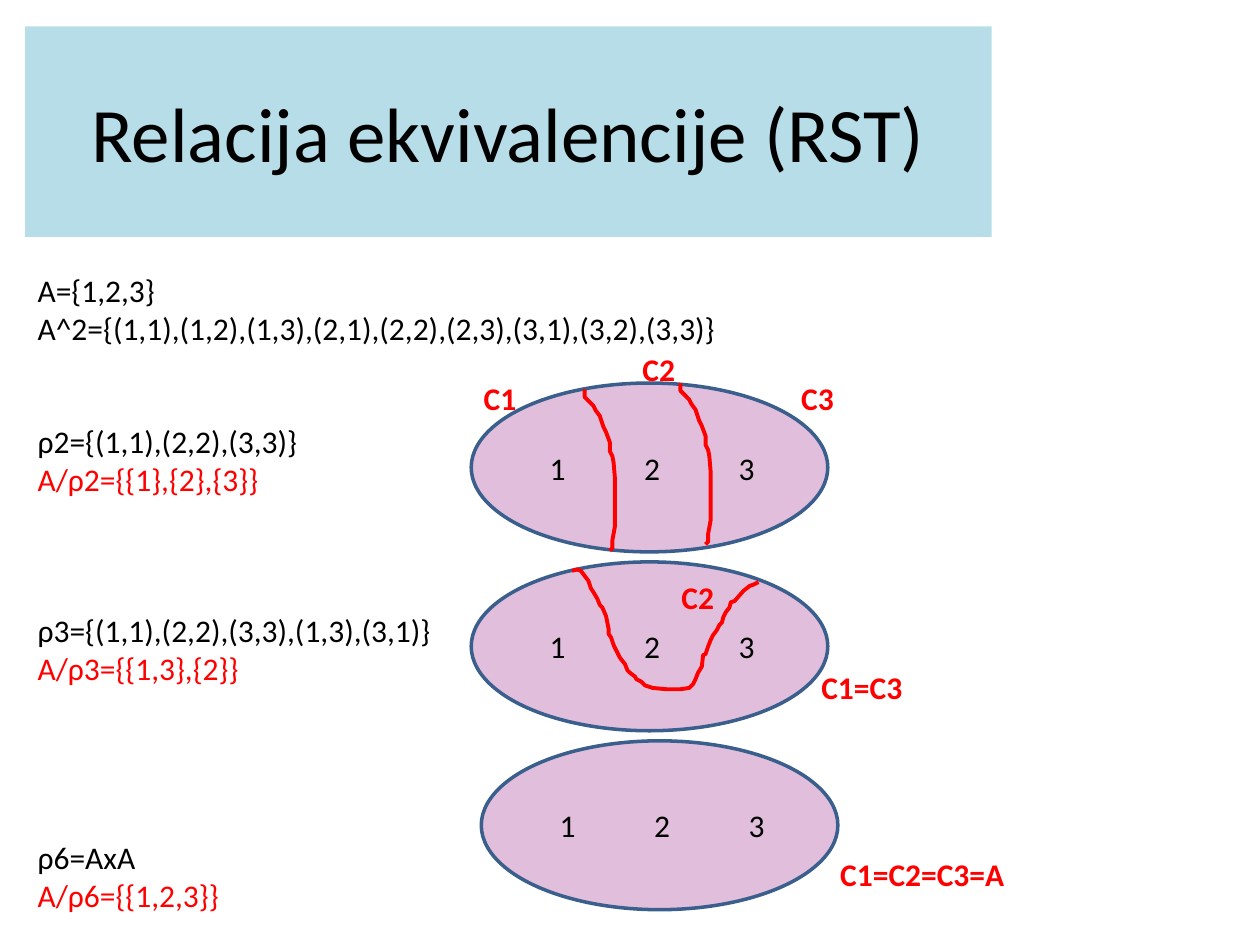
from dataclasses import dataclass
from pptx import Presentation
from pptx.dml.color import RGBColor
from pptx.enum.shapes import MSO_SHAPE
from pptx.enum.text import MSO_ANCHOR, PP_ALIGN
from pptx.oxml.ns import qn
from pptx.util import Inches, Pt
from lxml.etree import SubElement

BLACK = RGBColor(0, 0, 0)
RED = RGBColor(0xFF, 0, 0)
AQUA = RGBColor(0xB7, 0xDE, 0xE8)
PINK = RGBColor(0xE1, 0xBF, 0xDC)
BLUE = RGBColor(0x3A, 0x5F, 0x8C)

LINE = 21.6  # height of one text line in points


@dataclass
class Line:
    text: str
    color: RGBColor = BLACK
    gap: int = 0  # empty lines above


@dataclass
class Label:
    text: str
    x: float
    y: float
    w: float = 0.46


@dataclass
class Oval:
    x: float
    y: float


LINES = [
    Line("A={1,2,3}"),
    Line("A^2={(1,1),(1,2),(1,3),(2,1),(2,2),(2,3),(3,1),(3,2),(3,3)}"),
    Line("ρ2={(1,1),(2,2),(3,3)}", gap=2),
    Line("A/ρ2={{1},{2},{3}}", RED),
    Line("ρ3={(1,1),(2,2),(3,3),(1,3),(3,1)}", gap=3),
    Line("A/ρ3={{1,3},{2}}", RED),
    Line("ρ6=AxA", gap=4),
    Line("A/ρ6={{1,2,3}}", RED),
]
OVALS = [Oval(3.74, 3.04), Oval(3.74, 4.46), Oval(3.82, 5.88)]
LABELS = [
    Label("C1", 3.74, 2.96),
    Label("C2", 5, 2.73),
    Label("C3", 6.26, 2.96),
    Label("C1=C3", 6.42, 5.25, 0.85),
    Label("C2", 5.31, 4.54),
    Label("C1=C2=C3=A", 6.57, 6.74, 1.52),
]
WALL = [
    (4.64, 3.09), (4.64, 3.15), (4.68, 3.19), (4.71, 3.22), (4.73, 3.26),
    (4.76, 3.3), (4.79, 3.39), (4.81, 3.43), (4.84, 3.51), (4.84, 3.58),
    (4.86, 3.62), (4.87, 3.67), (4.88, 3.79), (4.88, 4.1), (4.88, 4.18),
    (4.86, 4.29), (4.86, 4.35), (4.84, 4.37),
]
BOWL = [
    (4.54, 4.53), (4.58, 4.52), (4.61, 4.53), (4.64, 4.57), (4.67, 4.61),
    (4.69, 4.67), (4.71, 4.7), (4.74, 4.75), (4.76, 4.8), (4.78, 4.82),
    (4.81, 4.89), (4.83, 4.99), (4.83, 5.03), (4.85, 5.06), (4.87, 5.12),
    (4.9, 5.18), (4.92, 5.22), (4.96, 5.27), (4.98, 5.32), (5, 5.34),
    (5.04, 5.37), (5.05, 5.39), (5.09, 5.41), (5.12, 5.44), (5.18, 5.46),
    (5.29, 5.47), (5.4, 5.47), (5.47, 5.46), (5.5, 5.43), (5.52, 5.39),
    (5.54, 5.34), (5.57, 5.29), (5.58, 5.2), (5.6, 5.19), (5.62, 5.13),
    (5.64, 5.08), (5.66, 5.04), (5.69, 5), (5.71, 4.96), (5.73, 4.94),
    (5.74, 4.9), (5.76, 4.86), (5.79, 4.82), (5.8, 4.78), (5.83, 4.77),
    (5.9, 4.69), (5.95, 4.65), (5.98, 4.64), (6.02, 4.62),
]


def style(para, size: int = 18, color: RGBColor = BLACK, bold: bool = False) -> None:
    font = para.font
    font.name, font.size, font.bold = "Calibri", Pt(size), bold
    font.color.rgb = color


def add_tabs(para, stops: list[float]) -> None:
    tabs = SubElement(para._p.get_or_add_pPr(), qn("a:tabLst"))
    for stop in stops:
        SubElement(tabs, qn("a:tab"), pos=str(Inches(stop)), algn="l")


def add_box(slide, x: float, y: float, w: float, h: float):
    box = slide.shapes.add_textbox(Inches(x), Inches(y), Inches(w), Inches(h))
    box.text_frame.word_wrap = False
    return box.text_frame


def add_title(slide) -> None:
    title = slide.shapes.title
    title.left, title.top = Inches(0.2), Inches(0.21)
    title.width, title.height = Inches(7.67), Inches(1.67)
    title.fill.solid()
    title.fill.fore_color.rgb = AQUA
    frame = title.text_frame
    frame.text = "Relacija ekvivalencije (RST)"
    frame.vertical_anchor = MSO_ANCHOR.MIDDLE
    frame.paragraphs[0].alignment = PP_ALIGN.CENTER
    style(frame.paragraphs[0], 44)


def add_lines(slide, lines: list[Line]) -> None:
    frame = add_box(slide, 0.2, 2.1, 5.65, 5.2)
    for i, line in enumerate(lines):
        para = frame.add_paragraph() if i else frame.paragraphs[0]
        para.text = line.text
        para.space_before = Pt(line.gap * LINE)
        style(para, color=line.color)


def add_oval(slide, oval: Oval) -> None:
    shape = slide.shapes.add_shape(
        MSO_SHAPE.OVAL, Inches(oval.x), Inches(oval.y), Inches(2.83), Inches(1.34))
    shape.shadow.inherit = False
    shape.fill.solid()
    shape.fill.fore_color.rgb = PINK
    shape.line.color.rgb = BLUE
    shape.line.width = Pt(2)
    frame = shape.text_frame
    frame.vertical_anchor = MSO_ANCHOR.MIDDLE
    para = frame.paragraphs[0]
    para.text = "\t1\t2\t3"
    para.alignment = PP_ALIGN.LEFT
    add_tabs(para, [0.11 + 0.75 * i for i in range(3)])
    style(para)


def add_curve(slide, points: list[tuple], dx: float = 0, dy: float = 0) -> None:
    spots = [(Inches(x + dx), Inches(y + dy)) for x, y in points]
    pen = slide.shapes.build_freeform(*spots[0])
    pen.add_line_segments(spots[1:], close=False)
    curve = pen.convert_to_shape()
    curve.shadow.inherit = False
    curve.fill.background()
    curve.line.color.rgb = RED
    curve.line.width = Pt(2.25)


def add_label(slide, label: Label) -> None:
    para = add_box(slide, label.x, label.y, label.w, 0.4).paragraphs[0]
    para.text = label.text
    style(para, color=RED, bold=True)


def main() -> None:
    deck = Presentation()
    deck.slide_width, deck.slide_height = Inches(10), Inches(7.5)
    slide = deck.slides.add_slide(deck.slide_layouts[5])
    add_title(slide)
    add_lines(slide, LINES)
    for oval in OVALS:
        add_oval(slide, oval)
    add_curve(slide, WALL)
    add_curve(slide, WALL, 0.76, -0.05)
    add_curve(slide, BOWL)
    for label in LABELS:
        add_label(slide, label)
    deck.save("out.pptx")


if __name__ == "__main__":
    main()
